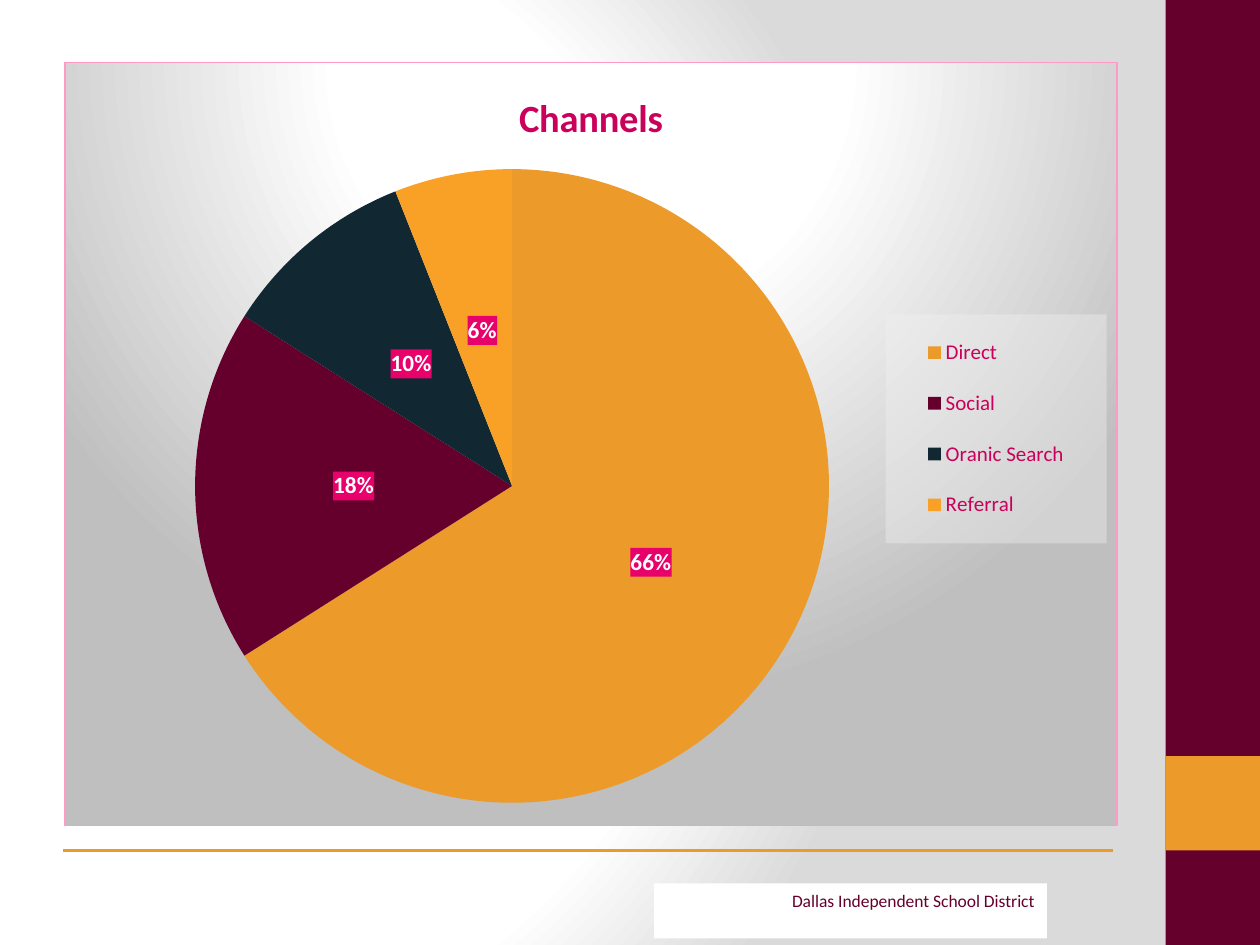
from dataclasses import dataclass

from pptx import Presentation
from pptx.chart.data import CategoryChartData
from pptx.dml.color import RGBColor
from pptx.enum.chart import XL_CHART_TYPE as ChartType
from pptx.enum.chart import XL_LABEL_POSITION as LabelPosition
from pptx.enum.chart import XL_LEGEND_POSITION as LegendPosition
from pptx.enum.shapes import MSO_CONNECTOR as Connector
from pptx.enum.shapes import MSO_SHAPE as Shape
from pptx.enum.text import MSO_ANCHOR as Anchor
from pptx.enum.text import PP_ALIGN as Align
from pptx.oxml import parse_xml
from pptx.oxml.ns import nsdecls, qn
from pptx.util import Pt

FONT = "Calibri"
MAROON, ORANGE, PINK, WHITE = "65002D", "EC9A29", "CB005B", "FFFFFF"


@dataclass
class Box:
    left: float
    top: float
    width: float
    height: float
    fill: str

    def lengths(self) -> tuple:
        return Pt(self.left), Pt(self.top), Pt(self.width), Pt(self.height)


@dataclass
class Channel:
    name: str
    share: int
    color: str


BOXES = [
    Box(666, 0, 54, 540, MAROON),
    Box(666, 432, 54, 54, ORANGE),
]
FOOTER = Box(373.75, 504.75, 224.5, 31.5, WHITE)
CHANNELS = [
    Channel("Direct", 66, ORANGE),
    Channel("Social", 18, MAROON),
    Channel("Oranic Search", 10, "112832"),
    Channel("Referral", 6, "F9A027"),
]


def rgb(color: str) -> RGBColor:
    return RGBColor.from_string(color)


def style_font(font, size: float, color: str, bold: bool = False) -> None:
    font.name, font.size, font.bold = FONT, Pt(size), bold
    font.color.rgb = rgb(color)


def write_text(text_frame, text: str, *, size: float, color: str,
               bold: bool = False, align=None) -> None:
    paragraph = text_frame.paragraphs[0]
    paragraph.alignment = align
    run = paragraph.add_run()
    run.text = text
    style_font(run.font, size, color, bold)


def add_box(slide, box: Box):
    shape = slide.shapes.add_shape(Shape.RECTANGLE, *box.lengths())
    shape.shadow.inherit = False
    shape.fill.solid()
    shape.fill.fore_color.rgb = rgb(box.fill)
    shape.line.fill.background()
    return shape


def circle_gradient(stops: list, focus: tuple) -> str:
    """Circular gradient; stops and focus (l, t, r, b) are in percent."""
    stop_xml = "".join(
        f'<a:gs pos="{position * 1000}"><a:srgbClr val="{color}"/></a:gs>'
        for position, color in stops)
    sides = " ".join(f'{side}="{value * 1000}"' for side, value in zip("ltrb", focus))
    return (f'<a:gradFill {nsdecls("a")} rotWithShape="1"><a:gsLst>{stop_xml}</a:gsLst>'
            f'<a:path path="circle"><a:fillToRect {sides}/></a:path></a:gradFill>')


def solid_fill(color: str, opacity: int = 100) -> str:
    return (f'<a:solidFill><a:srgbClr val="{color}">'
            f'<a:alpha val="{opacity * 1000}"/></a:srgbClr></a:solidFill>')


def chart_format(fill: str, line: str = ""):
    return parse_xml(f'<c:spPr {nsdecls("c", "a")}>{fill}{line}</c:spPr>')


def manual_layout(x: float, y: float, width: float, height: float, inner: bool = False):
    target = '<c:layoutTarget val="inner"/>' if inner else ""
    return parse_xml(
        f'<c:layout {nsdecls("c")}><c:manualLayout>{target}'
        '<c:xMode val="edge"/><c:yMode val="edge"/>'
        f'<c:x val="{x}"/><c:y val="{y}"/><c:w val="{width}"/><c:h val="{height}"/>'
        '</c:manualLayout></c:layout>')


def set_background(slide) -> None:
    slide.background.fill.solid()
    properties = slide.element.find(".//" + qn("p:bgPr"))
    gradient = circle_gradient([(0, WHITE), (75, WHITE), (100, "DADADA")], (20, 50, 100, 50))
    properties.replace(properties[0], parse_xml(gradient))


def add_rule(slide) -> None:
    rule = slide.shapes.add_connector(Connector.STRAIGHT, Pt(636), Pt(486), Pt(36), Pt(486))
    rule.line.color.rgb = rgb(ORANGE)
    rule.line.width = Pt(2)
    rule.element.spPr.append(parse_xml(f'<a:effectLst {nsdecls("a")}/>'))


def add_channel_chart(slide) -> None:
    data = CategoryChartData()
    data.categories = [channel.name for channel in CHANNELS]
    data.add_series("Channels", [channel.share for channel in CHANNELS])
    chart = slide.shapes.add_chart(
        ChartType.PIE, Pt(36.75), Pt(35.25), Pt(602), Pt(437), data).chart
    style_font(chart.font, 10, MAROON)
    chart.has_title = True
    write_text(chart.chart_title.text_frame, "Channels", size=22, color=PINK, bold=True)

    # Chart area
    gradient = circle_gradient([(0, WHITE), (39, WHITE), (100, "BFBFBF")], (50, -80, 50, 180))
    border = f'<a:ln w="{Pt(0.75)}">{solid_fill("FF99C6")}</a:ln>'
    chart.element.find(qn("c:chart")).addnext(chart_format(gradient, border))

    # Pie position
    plot_area = chart.element.find(".//" + qn("c:plotArea"))
    old_layout = plot_area.find(qn("c:layout"))
    if old_layout is not None:
        plot_area.remove(old_layout)
    plot_area.insert(0, manual_layout(0.12, 0.14, 0.61, 0.83, inner=True))

    # Slices and their labels
    plot = chart.plots[0]
    plot.vary_by_categories = True
    series = plot.series[0]
    for index, channel in enumerate(CHANNELS):
        fill = series.points[index].format.fill
        fill.solid()
        fill.fore_color.rgb = rgb(channel.color)
    labels = series.data_labels
    labels.show_percentage = True
    labels.show_value = False
    labels.number_format = "0%"
    labels.number_format_is_linked = False
    labels.position = LabelPosition.CENTER
    style_font(labels.font, 13.3, WHITE, bold=True)
    label_text = series.data_labels.font and chart.element.find(
        f'.//{qn("c:dLbls")}/{qn("c:txPr")}')
    label_text.addprevious(chart_format(solid_fill("E8006B")))

    # Legend
    chart.has_legend = True
    legend = chart.legend
    legend.position = LegendPosition.RIGHT
    legend.include_in_layout = False
    style_font(legend.font, 12, PINK)
    legend_element = chart.element.find(".//" + qn("c:legend"))
    old_layout = legend_element.find(qn("c:layout"))
    if old_layout is not None:
        legend_element.remove(old_layout)
    overlay = legend_element.find(qn("c:overlay"))
    overlay.addprevious(manual_layout(0.78, 0.33, 0.21, 0.3))
    overlay.addnext(chart_format(solid_fill("F2F2F2", 39)))


def main() -> None:
    presentation = Presentation()
    presentation.slide_width, presentation.slide_height = Pt(720), Pt(540)
    slide = presentation.slides.add_slide(presentation.slide_layouts[6])
    set_background(slide)

    # Side band and rule
    for box in BOXES:
        add_box(slide, box)
    add_rule(slide)

    # Footer
    footer = add_box(slide, FOOTER).text_frame
    footer.word_wrap = True
    footer.vertical_anchor = Anchor.TOP
    write_text(footer, "Dallas Independent School District",
               size=10, color=MAROON, align=Align.RIGHT)

    add_channel_chart(slide)
    presentation.save("out.pptx")


if __name__ == "__main__":
    main()
